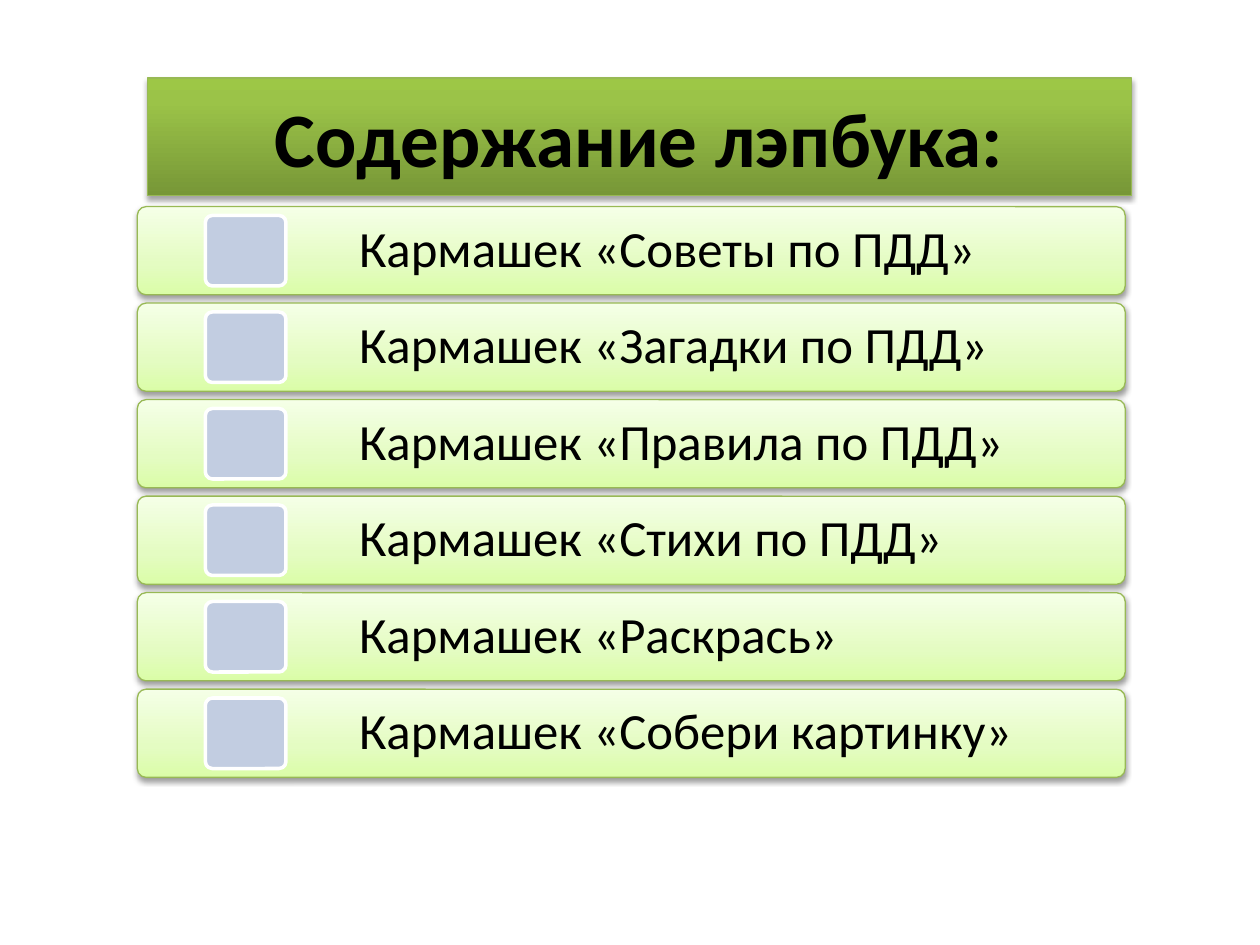
from copy import deepcopy

from lxml import etree
from pptx import Presentation
from pptx import util as u
from pptx.dml.color import RGBColor
from pptx.enum import shapes, text
from pptx.oxml.ns import qn

BLACK = RGBColor(0x00, 0x00, 0x00)
WHITE = RGBColor(0xFF, 0xFF, 0xFF)
EDGE = RGBColor(0x98, 0xB9, 0x55)
BLUE = RGBColor(0xC2, 0xCD, 0xE1)
DARK = [(0, RGBColor(0x77, 0x97, 0x37)), (0.8, RGBColor(0x9B, 0xC3, 0x48)),
        (1, RGBColor(0x9D, 0xC7, 0x46))]
PALE = [(0, RGBColor(0xDA, 0xFD, 0xA7)), (0.35, RGBColor(0xE4, 0xFC, 0xC2)),
        (1, RGBColor(0xF5, 0xFF, 0xE7))]

RECT = shapes.MSO_SHAPE.RECTANGLE
ROUND = shapes.MSO_SHAPE.ROUNDED_RECTANGLE
FONT = "Calibri"
TITLE = "Содержание лэпбука:"
ITEMS = ["Советы по ПДД", "Загадки по ПДД", "Правила по ПДД",
         "Стихи по ПДД", "Раскрась", "Собери картинку"]
TOP, STEP, HIGH = 1.64, 0.766, 0.7


def add_box(slide, kind, box, line, width):
    shape = slide.shapes.add_shape(kind, *map(u.Inches, box))
    shape.shadow.inherit = False
    shape.line.color.rgb = line
    shape.line.width = u.Pt(width)
    if kind == ROUND:
        shape.adjustments[0] = 0.1
    return shape


def shade(shape, stops):
    """Fill with a three-stop gradient that runs from bottom to top."""
    fill = shape.fill
    fill.gradient()
    fill.gradient_angle = 90
    first = shape._element.spPr.find(".//" + qn("a:gs"))
    first.addnext(deepcopy(first))
    for stop, (place, color) in zip(fill.gradient_stops, stops):
        stop.position = place
        stop.color.rgb = color


def drop_shadow(shape, alpha, dist):
    effects = shape._element.spPr.find(qn("a:effectLst"))
    outer = etree.SubElement(
        effects, qn("a:outerShdw"), blurRad=str(u.Pt(3.1)),
        dist=str(u.Pt(dist)), dir="5400000", rotWithShape="0")
    color = etree.SubElement(outer, qn("a:srgbClr"), val="000000")
    etree.SubElement(color, qn("a:alpha"), val=str(alpha * 1000))


def write(shape, words, size, align, bold=False):
    frame = shape.text_frame
    frame.text = words
    frame.word_wrap = True
    frame.vertical_anchor = text.MSO_ANCHOR.MIDDLE
    para = frame.paragraphs[0]
    para.alignment = align
    font = para.runs[0].font
    font.name, font.size, font.bold = FONT, u.Pt(size), bold
    font.color.rgb = BLACK
    return frame


def add_title(slide):
    shape = add_box(slide, RECT, (1.17, 0.62, 7.81, 0.93), EDGE, 0.75)
    shade(shape, DARK)
    drop_shadow(shape, 35, 1.8)
    write(shape, TITLE, 44, text.PP_ALIGN.CENTER, True)


def add_row(slide, top, name):
    # Green bar
    bar = add_box(slide, ROUND, (1.09, top, 7.84, HIGH), EDGE, 0.75)
    shade(bar, PALE)
    drop_shadow(bar, 38, 1.6)

    # Label
    label = slide.shapes.add_textbox(
        *map(u.Inches, (2.73, top, 6.2, HIGH)))
    frame = write(label, f"Кармашек «{name}»", 29, text.PP_ALIGN.LEFT)
    frame.paragraphs[0].line_spacing = 0.9
    frame.margin_left = frame.margin_right = u.Inches(0.12)
    frame.margin_top = frame.margin_bottom = u.Inches(0.12)

    # Blue tile
    tile = add_box(slide, ROUND, (1.63, top + 0.07, 0.64, 0.56), WHITE, 2)
    tile.fill.solid()
    tile.fill.fore_color.rgb = BLUE


def main():
    deck = Presentation()
    deck.slide_width, deck.slide_height = u.Inches(10), u.Inches(7.5)
    slide = deck.slides.add_slide(deck.slide_layouts[6])
    add_title(slide)
    for row, name in enumerate(ITEMS):
        add_row(slide, TOP + row * STEP, name)
    deck.save("out.pptx")


if __name__ == "__main__":
    main()
